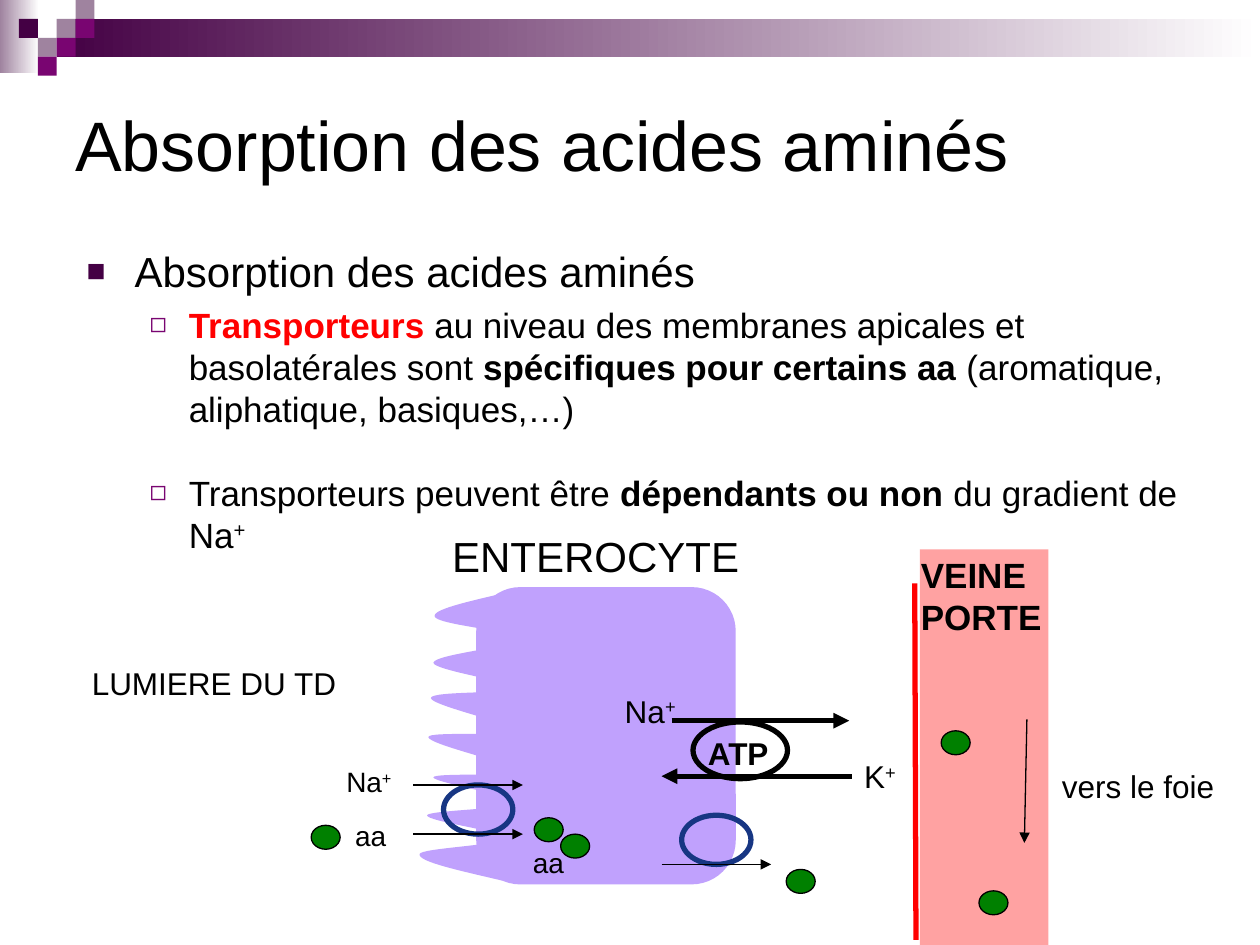
from lxml import etree
from pptx import Presentation
from pptx.dml.color import RGBColor
from pptx.enum import shapes, text
from pptx.oxml import ns
from pptx.util import Inches, Pt

BLACK, PURPLE, PLUM, MAUVE = "000000", "440044", "790571", "9F839F"
CELL, RED, GREEN, BLUE = "C0A1FD", "FF0000", "008000", "173683"

BANDS = [((0, 0, 0.31, 0.58), MAUVE), ((0.45, 0.15, 9.55, 0.3), PURPLE)]
TILE = 0.15
TILES = [(3, 1, MAUVE), (4, 0, MAUVE), (4, 1, PLUM), (2, 2, MAUVE),
         (1, 1, PURPLE), (3, 2, PLUM), (2, 3, PLUM)]

VILLI_START = (3.99, 6.99)
VILLI = [
    (3.65, 6.91, 3.32, 6.84, 3.33, 6.78), (3.33, 6.73, 4, 6.71, 4.01, 6.65),
    (4.02, 6.6, 3.38, 6.52, 3.39, 6.47), (3.41, 6.43, 4.09, 6.42, 4.1, 6.37),
    (4.1, 6.32, 3.44, 6.21, 3.44, 6.17), (3.44, 6.13, 4.1, 6.17, 4.09, 6.11),
    (4.08, 6.06, 3.4, 5.91, 3.4, 5.85), (3.4, 5.8, 4.09, 5.85, 4.1, 5.8),
    (4.1, 5.75, 3.42, 5.6, 3.42, 5.54), (3.42, 5.48, 4.1, 5.51, 4.1, 5.46),
    (4.11, 5.42, 3.44, 5.32, 3.44, 5.26), (3.45, 5.19, 4.13, 5.13, 4.13, 5.07),
    (4.13, 5.01, 3.45, 4.96, 3.45, 4.89), (3.44, 4.83, 3.78, 4.76, 4.12, 4.68)]

TITLE = "Absorption des acides aminés"
BODY = [
    dict(runs=[("Absorption des acides aminés", "")], size=24, before=4.8,
         margin=0.38, hang=0.38, bullet="■", tint=PURPLE, scale=75),
    dict(runs=[("Transporteurs ", "bold red"),
               ("au niveau des membranes apicales et basolatérales sont ", ""),
               ("spécifiques pour certains aa", "bold"),
               (" (aromatique, aliphatique, basiques,…)", "")],
         size=20, before=4, margin=0.81, hang=0.31, bullet="◻", tint=PLUM, scale=80),
    dict(runs=[("Transporteurs peuvent être ", ""), ("dépendants ou non", "bold"),
               (" du gradient de Na", ""), ("+", "super")],
         size=20, before=24, margin=0.81, hang=0.31, bullet="◻", tint=PLUM, scale=80)]

SODIUM = [("Na", ""), ("+", "super")]
LABELS = [
    ((6.76, 5.96, 0.47, 0.4), 18, [[("K", ""), ("+", "super")]]),
    ((4.86, 5.44, 0.62, 0.4), 18, [SODIUM]),
    ((5.52, 5.78, 0.7, 0.4), 18, [[("ATP", "bold")]]),
    ((2.65, 6.02, 0.57, 0.37), 16, [SODIUM]),
    ((2.72, 6.45, 0.45, 0.37), 16, [[("aa", "")]]),
    ((4.13, 6.66, 0.45, 0.37), 16, [[("aa", "")]]),
    ((0.63, 5.22, 2.15, 0.4), 18, [[("LUMIERE DU TD", "")]]),
    ((7.21, 4.34, 1.43, 0.77), 20, [[("VEINE", "bold")], [("PORTE", "bold")]]),
    ((3.49, 4.16, 2.48, 0.5), 24, [[("ENTEROCYTE", "")]])]
LIVER = ((8.33, 6.04, 1.41, 0.4), 18, [[("vers le foie", "")]])

CARRIERS = [((5.5, 5.73, 0.75, 0.45), BLACK), ((3.52, 6.23, 0.55, 0.39), BLUE),
            ((5.41, 6.47, 0.55, 0.39), BLUE)]
ARROWS = [((6.76, 6.16), (5.25, 6.16), 3), ((5.33, 5.72), (6.74, 5.72), 3),
          ((3.28, 6.23), (4.15, 6.23), 0.75), ((3.28, 6.62), (4.15, 6.62), 0.75),
          ((5.25, 6.86), (6.12, 6.86), 0.75), ((8.15, 5.71), (8.13, 6.69), 0.75)]
AMINO_ACIDS = [(2.47, 6.55), (4.24, 6.49), (4.45, 6.62),
               (6.24, 6.9), (7.47, 5.8), (7.77, 7.07)]

prs = Presentation()
prs.slide_width, prs.slide_height = Inches(10), Inches(7.5)
slide = prs.slides.add_slide(prs.slide_layouts[6])


def rgb(value):
    return RGBColor.from_string(value)


def child(parent, tag, **attrs):
    return etree.SubElement(parent, ns.qn(tag), attrs)


def paint(shape, fill=None, line=None, width=0.75):
    shape.shadow.inherit = False
    if fill:
        shape.fill.solid()
        shape.fill.fore_color.rgb = rgb(fill)
    else:
        shape.fill.background()
    if line:
        shape.line.color.rgb = rgb(line)
        shape.line.width = Pt(width)
    else:
        shape.line.fill.background()
    return shape


def add(kind, box, fill=None, line=None, width=0.75):
    shape = slide.shapes.add_shape(kind, *map(Inches, box))
    return paint(shape, fill, line, width)


def connect(start, end, color, width, arrow=True):
    link = slide.shapes.add_connector(
        shapes.MSO_CONNECTOR.STRAIGHT, *map(Inches, start + end))
    link.line.color.rgb = rgb(color)
    link.line.width = Pt(width)
    if arrow:
        child(link.line._get_or_add_ln(), "a:tailEnd", type="triangle")
    child(link._element.spPr, "a:effectLst")


def write(paragraph, runs, size):
    paragraph.alignment = text.PP_ALIGN.LEFT
    for words, style in runs:
        run = paragraph.add_run()
        run.text = words
        font = run.font
        font.name, font.size, font.bold = "Arial", Pt(size), "bold" in style
        font.color.rgb = rgb(RED if "red" in style else BLACK)
        if "super" in style:
            run._r.get_or_add_rPr().set("baseline", "30000")


def label(box, size, lines, wrap=False, holder=None):
    holder = holder or slide.shapes.add_textbox(*map(Inches, box))
    frame = holder.text_frame
    frame.word_wrap = wrap
    for i, runs in enumerate(lines):
        write(frame.add_paragraph() if i else frame.paragraphs[0], runs, size)
    return frame


def curved_outline(start, curves, fill):
    ends = [curve[4:] for curve in curves]
    builder = slide.shapes.build_freeform(*map(Inches, start))
    builder.add_line_segments([tuple(map(Inches, end)) for end in ends], close=True)
    shape = paint(builder.convert_to_shape(), fill)
    segments = list(shape._element.iter(ns.qn("a:lnTo")))
    for segment, curve in zip(segments, curves):
        bend = etree.Element(ns.qn("a:cubicBezTo"))
        for x, y in zip(curve[::2], curve[1::2]):
            child(bend, "a:pt", x=str(Inches(x) - shape.left), y=str(Inches(y) - shape.top))
        segment.getparent().replace(segment, bend)


RECT, OVAL = shapes.MSO_SHAPE.RECTANGLE, shapes.MSO_SHAPE.OVAL

for box, color in BANDS:
    band = add(RECT, box)
    band.fill.gradient()
    band.fill.gradient_angle = 0
    for stop, tone in zip(band.fill.gradient_stops, (color, "FFFFFF")):
        stop.color.rgb = rgb(tone)
for column, row, color in TILES:
    add(RECT, (column * TILE, row * TILE, TILE, TILE), color)

curved_outline(VILLI_START, VILLI, CELL)

connect((7.26, 4.63), (7.27, 7.46), RED, 3, arrow=False)
vein = add(RECT, (7.3, 4.36, 1.02, 3.14), "FF6565")
child(vein._element.spPr.find(ns.qn("a:solidFill"))[0], "a:alpha", val="60000")

heading = label((0.5, 0.39, 9, 1.5), 40, [[(TITLE, "")]], wrap=True)
heading.vertical_anchor = text.MSO_ANCHOR.MIDDLE

body = label((0.59, 1.9, 8.93, 4.25), 20, [], wrap=True)
for i, item in enumerate(BODY):
    paragraph = body.add_paragraph() if i else body.paragraphs[0]
    write(paragraph, item["runs"], item["size"])
    paragraph.space_before = Pt(item["before"])
    props = paragraph._p.get_or_add_pPr()
    props.set("marL", str(Inches(item["margin"])))
    props.set("indent", str(-Inches(item["hang"])))
    child(child(props, "a:buClr"), "a:srgbClr", val=item["tint"])
    child(props, "a:buSzPct", val=str(item["scale"] * 1000))
    child(props, "a:buFont", typeface="Arial")
    child(props, "a:buChar", char=item["bullet"])

cell = add(shapes.MSO_SHAPE.ROUNDED_RECTANGLE, (3.78, 4.66, 2.06, 2.36), CELL)
cell.adjustments[0] = 0.17
for box, color in CARRIERS:
    add(OVAL, box, line=color, width=3)
for start, end, width in ARROWS:
    connect(start, end, BLACK, width)
for entry in LABELS:
    label(*entry)
for left, top in AMINO_ACIDS:
    add(OVAL, (left, top, 0.23, 0.19), GREEN, BLACK)
label(*LIVER, holder=add(RECT, LIVER[0], "FFFFFF"))

prs.save("out.pptx")
